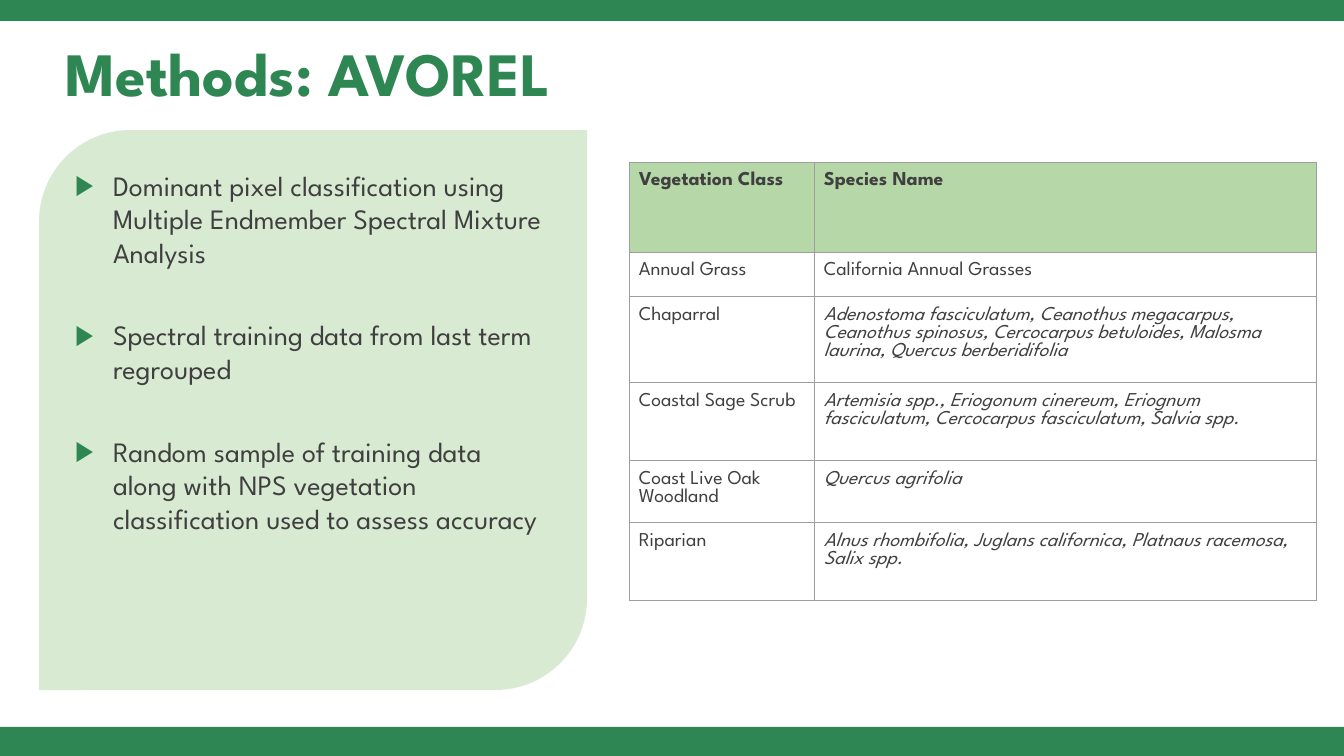
from lxml.etree import SubElement
from pptx import Presentation
from pptx.dml.color import RGBColor
from pptx.enum.shapes import MSO_SHAPE
from pptx.enum.text import MSO_ANCHOR, MSO_AUTO_SIZE, PP_ALIGN
from pptx.oxml.ns import qn
from pptx.util import Emu, Pt

FONT = "League Spartan"
GREEN, PALE, HEADER, WHITE = "2E8652", "D9EAD3", "B6D7A8", "FFFFFF"
BODY_INK, TABLE_INK, BORDER = "3F3F3F", "404040", "9E9E9E"
SLIDE_W, SLIDE_H = 1344, 756
INSET = 10

HEADING = "Methods: AVOREL"
METHODS = [
    "Dominant pixel classification using Multiple Endmember Spectral Mixture Analysis",
    "Spectral training data from last term regrouped",
    "Random sample of training data along with NPS vegetation classification used to assess accuracy",
]
SPECIES = [
    ("Vegetation Class", "Species Name"),
    ("Annual Grass", "California Annual Grasses"),
    ("Chaparral", "Adenostoma fasciculatum, Ceanothus megacarpus, Ceanothus spinosus, "
                  "Cercocarpus betuloides, Malosma laurina, Quercus berberidifolia"),
    ("Coastal Sage Scrub", "Artemisia spp., Eriogonum cinereum, Eriognum fasciculatum, "
                           "Cercocarpus fasciculatum, Salvia spp."),
    ("Coast Live Oak Woodland", "Quercus agrifolia"),
    ("Riparian", "Alnus rhombifolia, Juglans californica, Platnaus racemosa, Salix spp."),
]
COLUMN_WIDTHS = [185, 503]
ROW_HEIGHTS = [90, 45, 86, 78, 62, 78]
FIRST_LATIN_ROW = 2


def px(length):
    return Emu(round(length * 914400 / 100.8))


def color(value):
    return RGBColor.from_string(value)


def place(part, left, top, width, height):
    part.left, part.top = px(left), px(top)
    part.width, part.height = px(width), px(height)


def add_run(paragraph, text, size, ink, bold=False, italic=False):
    run = paragraph.add_run()
    run.text = text
    run.font.name, run.font.size = FONT, Pt(size)
    run.font.bold, run.font.italic = bold, italic
    run.font.color.rgb = color(ink)


def add_block(kind, box, fill):
    block = slide.shapes.add_shape(kind, *map(px, box))
    block.shadow.inherit = False
    block.fill.solid()
    block.fill.fore_color.rgb = color(fill)
    block.line.fill.background()
    title._element.addprevious(block._element)
    return block


def add_bullet(paragraph):
    properties = paragraph._p.get_or_add_pPr()
    properties.set("marL", str(px(38)))
    properties.set("indent", str(-px(38)))
    bullet_color = SubElement(properties, qn("a:buClr"))
    SubElement(bullet_color, qn("a:srgbClr"), val=GREEN)
    SubElement(properties, qn("a:buChar"), char="▶")


def add_borders(cell):
    properties = cell._tc.get_or_add_tcPr()
    for side in ("L", "R", "T", "B"):
        edge = SubElement(properties, qn(f"a:ln{side}"), w=str(Pt(0.75)))
        SubElement(SubElement(edge, qn("a:solidFill")), qn("a:srgbClr"), val=BORDER)


deck = Presentation()
deck.slide_width, deck.slide_height = px(SLIDE_W), px(SLIDE_H)
slide = deck.slides.add_slide(deck.slide_layouts[1])
title, methods = slide.placeholders

for top, height in ((0, 21), (727, 29)):
    add_block(MSO_SHAPE.RECTANGLE, (0, top, SLIDE_W, height), GREEN)
panel = add_block(MSO_SHAPE.ROUND_2_DIAG_RECTANGLE, (39, 130, 548, 560), PALE)
panel.adjustments[0], panel.adjustments[1] = 0.167, 0

place(title, 55, 48, 1234, 57)
title.text_frame.auto_size = MSO_AUTO_SIZE.NONE
title.text_frame.vertical_anchor = MSO_ANCHOR.MIDDLE
heading = title.text_frame.paragraphs[0]
heading.alignment, heading.line_spacing = PP_ALIGN.LEFT, 0.9
add_run(heading, HEADING, 44, GREEN, bold=True)

place(methods, 65, 158, 496, 505)
frame = methods.text_frame
frame.auto_size = MSO_AUTO_SIZE.NONE
frame.margin_left = frame.margin_right = frame.margin_top = frame.margin_bottom = px(INSET)
for number, method in enumerate(METHODS):
    paragraph = frame.add_paragraph() if number else frame.paragraphs[0]
    paragraph.line_spacing = 1.0
    paragraph.space_before = Pt(35 if number else 6)
    add_bullet(paragraph)
    add_run(paragraph, method, 20, BODY_INK)

species_table = slide.shapes.add_table(
    len(SPECIES), len(COLUMN_WIDTHS), px(629), px(162),
    px(sum(COLUMN_WIDTHS)), px(sum(ROW_HEIGHTS))).table
species_table.horz_banding = False
for column, width in zip(species_table.columns, COLUMN_WIDTHS):
    column.width = px(width)
for row, height in zip(species_table.rows, ROW_HEIGHTS):
    row.height = px(height)

for r, entries in enumerate(SPECIES):
    for c, entry in enumerate(entries):
        cell = species_table.cell(r, c)
        cell.margin_left = cell.margin_right = cell.margin_top = cell.margin_bottom = px(INSET)
        add_borders(cell)
        cell.fill.solid()
        cell.fill.fore_color.rgb = color(WHITE if r else HEADER)
        add_run(cell.text_frame.paragraphs[0], entry, 14, TABLE_INK,
                bold=r == 0, italic=c == 1 and r >= FIRST_LATIN_ROW)

deck.save("out.pptx")
